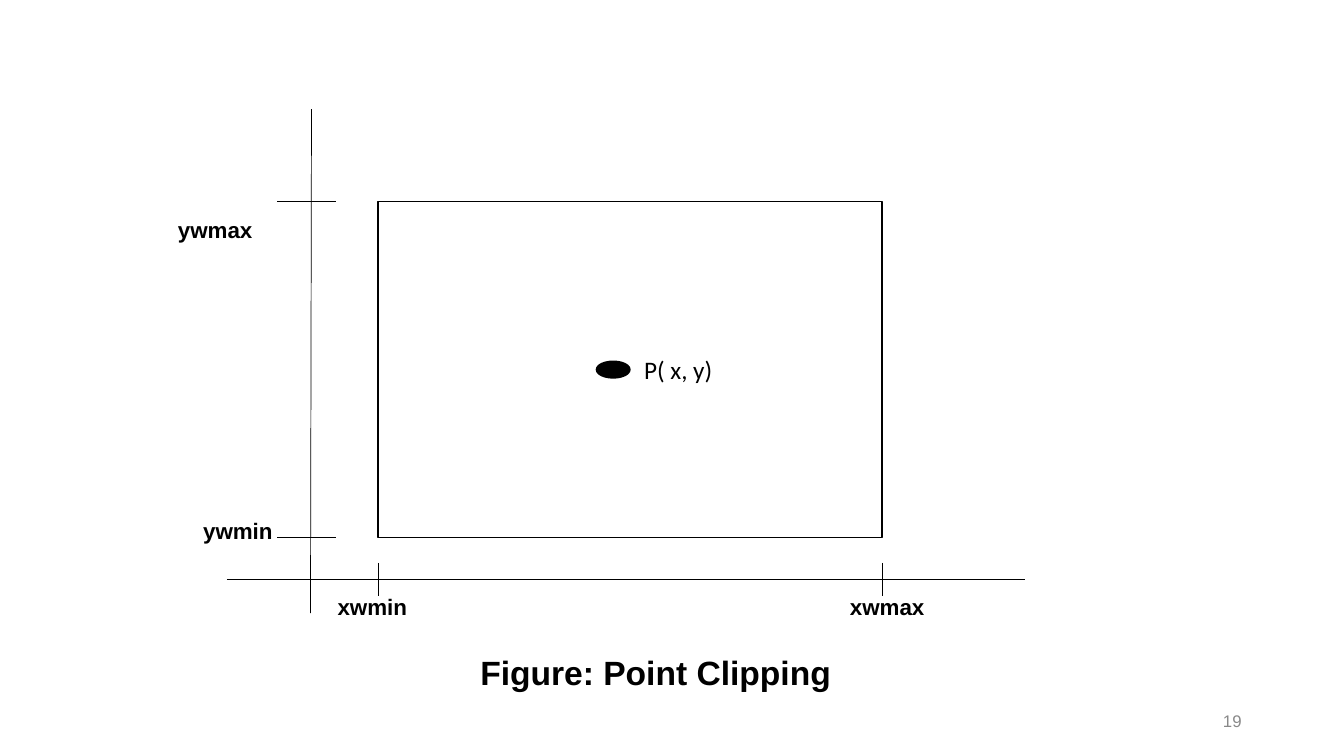
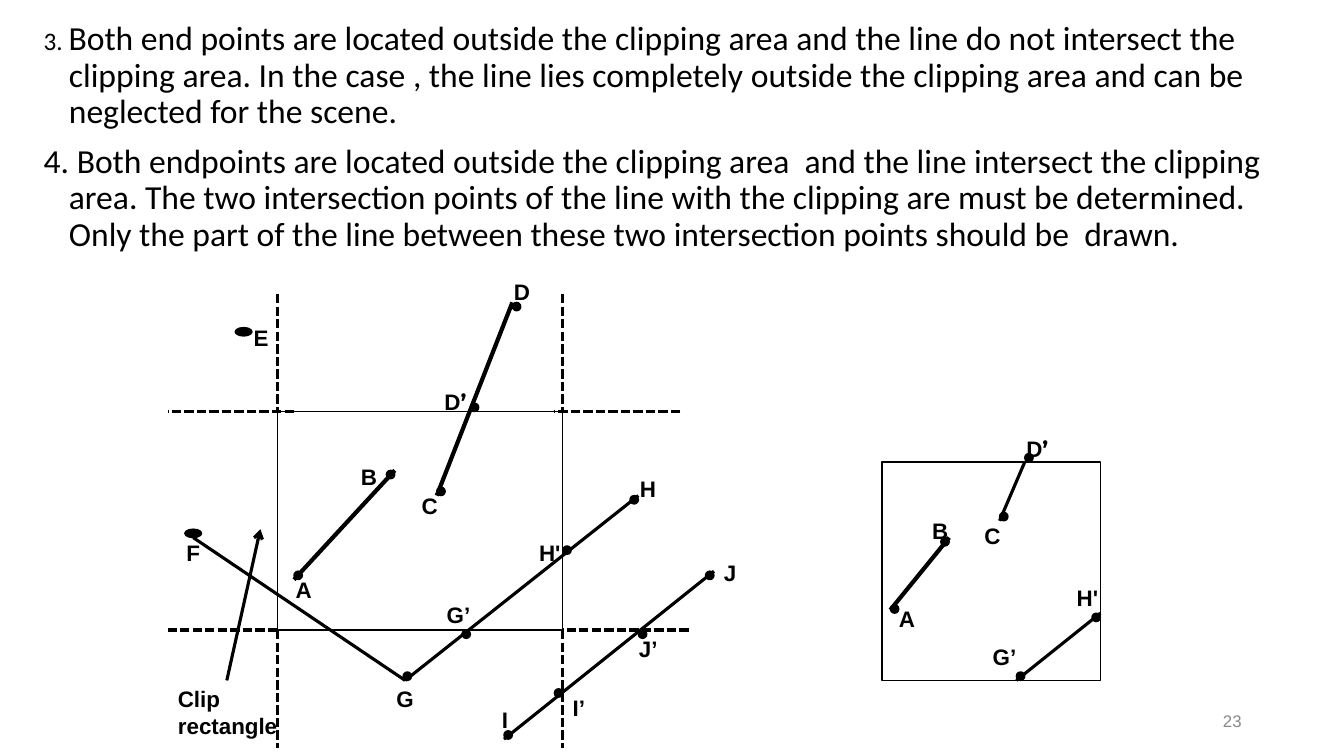
from lxml import etree
from pptx import Presentation
from pptx.dml.color import RGBColor
from pptx.enum.dml import MSO_LINE
from pptx.enum.shapes import MSO_CONNECTOR, MSO_SHAPE
from pptx.enum.text import MSO_ANCHOR, MSO_AUTO_SIZE, PP_ALIGN
from pptx.oxml.ns import qn
from pptx.util import Pt

STRAIGHT = MSO_CONNECTOR.STRAIGHT
RECTANGLE, OVAL = MSO_SHAPE.RECTANGLE, MSO_SHAPE.OVAL
DASHED = MSO_LINE.SQUARE_DOT
TOP, MIDDLE = MSO_ANCHOR.TOP, MSO_ANCHOR.MIDDLE
LEFT, CENTER, RIGHT = PP_ALIGN.LEFT, PP_ALIGN.CENTER, PP_ALIGN.RIGHT
NO_FIT = MSO_AUTO_SIZE.NONE

# Shared style
BLACK, WHITE, GREY = "000000", "FFFFFF", "898989"
LABEL_FONT, BODY_FONT, PRIME_FONT = "Arial", "Calibri", "Montserrat"
LABEL_SIZE, LABEL_HEIGHT = 16, 27
NUMBER_BOX = (678, 500.4, 216, 28.8)
THIN, MEDIUM, THICK = 0.5, 2.25, 3
DOT = 6

# Point clipping: window and axes
WINDOW = (270, 144, 360, 240)
POINT = (426, 258, 24, 12)
POINT_NAME = "P( x, y)"
POINT_NAME_INSET = 76
AXES = [((222.5, 78), (221.8, 438)), ((162, 414), (732, 414))]
Y_TICK, X_TICK = (198, 240), (402, 426)
LIMITS = [  # text, left, top
    ("ywmax", 120, 151), ("ywmin", 138, 366),
    ("xwmin", 234, 420), ("xwmax", 600, 420),
]
CAPTION = "Figure: Point Clipping"

# Line clipping: cases, points and lines
CASES = [
    [("3. ", 18), ("Both end points are located outside the clipping area and "
                   "the line do not intersect the clipping area. In the case , "
                   "the line lies completely outside the clipping area and can "
                   "be neglected for the scene.", 24)],
    [("4. Both endpoints are located outside the clipping area  and the line "
      "intersect the clipping area. The two intersection points of the line "
      "with the clipping are must be determined. Only the part of the line "
      "between these two intersection points should be  drawn.", 24)],
]
CLIP_AREA = (198, 294, 204, 156)
RESULT_AREA = (630, 330, 156, 156)
POINTS = [  # name, dot left and top, label left and top, dot width
    ("A", (210, 408), (204, 408), DOT),
    ("B", (276, 336), (250.6, 327.6), DOT),
    ("C", (312, 348), (294, 348), DOT),
    ("D", (366, 216), (360, 195), DOT),
    ("D’", (336, 288), (310.3, 273.6), DOT),
    ("E", (168, 234), (174, 228), 2 * DOT),
    ("F", (132, 378), (126, 381.6), 2 * DOT),
    ("G", (288, 480), (276, 486), DOT),
    ("G’", (330, 450), (312, 426), DOT),
    ("H", (450, 354), (450, 336), DOT),
    ("H'", (402, 390), (378, 381.6), DOT),
    ("I", (360, 522), (351.4, 501), DOT),
    ("I’", (396, 492), (402, 492), DOT),
    ("J", (504, 408), (510, 396), DOT),
    ("J’", (456, 450), (449.3, 450), DOT),
    # after clipping
    ("A", (636, 432), (635, 428.4), DOT),
    ("B", (672, 384), (658.8, 366), DOT),
    ("C", (714, 366), (696, 369.4), DOT),
    ("D’", (732, 324), (726, 307.4), DOT),
    ("G’", (726, 480), (702, 456), DOT),
    ("H'", (780, 438), (762, 414), DOT),
]
SEGMENTS = [
    ((210, 414), (282, 336), THICK),
    ((312, 354), (366, 216), THICK),
    ((360, 528), (510, 408), MEDIUM),
    ((289.4, 486), (456, 354), MEDIUM),
    ((289.4, 486), (138, 384), MEDIUM),
    # after clipping
    ((636, 435.6), (678, 384), THICK),
    ((714, 372), (732, 330), MEDIUM),
    ((726, 486), (786, 438), MEDIUM),
]
POINTER = ((162, 486), (186, 378))
POINTER_NAME = "Clip\nrectangle"


def color(hex_text):
    return RGBColor.from_string(hex_text)


def style(run, size, font=LABEL_FONT, bold=False, ink=BLACK):
    run.font.size, run.font.name, run.font.bold = Pt(size), font, bold
    run.font.color.rgb = color(ink)


def add_text(slide, text, box, size=LABEL_SIZE, bold=True, ink=BLACK,
             align=LEFT, anchor=TOP):
    frame = slide.shapes.add_textbox(*map(Pt, box)).text_frame
    frame.word_wrap = True
    frame.vertical_anchor = anchor
    frame.text = text
    for paragraph in frame.paragraphs:
        paragraph.alignment = align
        for run in paragraph.runs:
            style(run, size, bold=bold, ink=ink)
    return frame


def add_figure(slide, kind, box, fill=None):
    figure = slide.shapes.add_shape(kind, *map(Pt, box))
    figure.shadow.inherit = False
    if fill:
        figure.fill.solid()
        figure.fill.fore_color.rgb = color(fill)
    else:
        figure.fill.background()
    figure.line.color.rgb = color(BLACK)
    figure.line.width = Pt(1)
    return figure


def add_line(slide, start, end, width=THIN, dash=None, arrow=False):
    line = slide.shapes.add_connector(STRAIGHT, *map(Pt, (*start, *end)))
    line.line.color.rgb = color(BLACK)
    line.line.width = Pt(width)
    if dash:
        line.line.dash_style = dash
    properties = line._element.spPr
    if arrow:
        etree.SubElement(properties.find(qn("a:ln")), qn("a:tailEnd"), type="arrow")
    etree.SubElement(properties, qn("a:effectLst"))


def add_number(slide, number):
    add_text(slide, number, NUMBER_BOX, 12, False, GREY, RIGHT, MIDDLE)


def add_point(slide, name, dot, label, dot_width):
    add_figure(slide, OVAL, (*dot, dot_width, DOT), BLACK)
    frame = add_text(slide, name, (*label, 20 + 7 * len(name), LABEL_HEIGHT))
    if name == "D’":
        paragraph = frame.paragraphs[0]
        paragraph.runs[0].text = name[0]
        prime = paragraph.add_run()
        prime.text = name[1]
        style(prime, LABEL_SIZE, PRIME_FONT, True)


def build_point_clipping(deck):
    slide = deck.slides.add_slide(deck.slide_layouts[6])
    left, top, width, height = WINDOW
    for start, end in AXES:
        add_line(slide, start, end)

    # Window with the point inside
    frame = add_figure(slide, RECTANGLE, WINDOW, WHITE).text_frame
    frame.vertical_anchor = MIDDLE
    frame.margin_left = Pt(POINT_NAME_INSET)
    frame.text = POINT_NAME
    frame.paragraphs[0].alignment = CENTER
    style(frame.paragraphs[0].runs[0], 18, BODY_FONT)
    add_figure(slide, OVAL, POINT, BLACK)

    # Ticks level with the window's sides
    for y in (top, top + height):
        add_line(slide, (Y_TICK[0], y), (Y_TICK[1], y))
    for x in (left, left + width):
        add_line(slide, (x, X_TICK[0]), (x, X_TICK[1]))
    for text, x, y in LIMITS:
        add_text(slide, text, (x, y, 76, LABEL_HEIGHT))

    add_text(slide, CAPTION, (336, 462, 280, 36.7), 24)
    add_number(slide, "19")


def add_cases(slide):
    body = slide.placeholders[1]
    body.left, body.top, body.width, body.height = map(Pt, (24, 12, 906, 522))
    frame = body.text_frame
    frame.auto_size = NO_FIT
    for index, case in enumerate(CASES):
        paragraph = frame.add_paragraph() if index else frame.paragraphs[0]
        paragraph.line_spacing = 0.9
        paragraph.space_before = Pt(10)
        layout = paragraph._p.get_or_add_pPr()
        layout.set("marL", str(Pt(18)))
        layout.set("indent", str(Pt(-18)))
        etree.SubElement(layout, qn("a:buNone"))
        for text, size in case:
            run = paragraph.add_run()
            run.text = text
            style(run, size, BODY_FONT)


def build_line_clipping(deck):
    slide = deck.slides.add_slide(deck.slide_layouts[1])
    title = slide.shapes.title._element
    title.getparent().remove(title)
    add_cases(slide)
    add_number(slide, "23")

    # Clipping area, its extended sides and the clipped result
    for area in (CLIP_AREA, RESULT_AREA):
        add_figure(slide, RECTANGLE, area)
    left, top, width, height = CLIP_AREA
    right, bottom = left + width, top + height
    for x in (left, right):
        for y_from, y_to in ((210, top), (bottom, 534)):
            add_line(slide, (x, y_from), (x, y_to), MEDIUM, DASHED)
    for y, x_from, x_to in ((top, left + 12, 120), (top, 486, right - 6),
                            (bottom, left, 120), (bottom, 492, right)):
        add_line(slide, (x_from, y), (x_to, y), MEDIUM, DASHED)

    # Lines, points and the pointer to the clipping area
    for segment in SEGMENTS:
        add_line(slide, *segment)
    for point in POINTS:
        add_point(slide, *point)
    add_line(slide, *POINTER, MEDIUM, arrow=True)
    add_text(slide, POINTER_NAME, (120, 486, 90, 46))


def main():
    deck = Presentation()
    deck.slide_width, deck.slide_height = Pt(960), Pt(540)
    build_point_clipping(deck)
    build_line_clipping(deck)
    deck.save("out.pptx")


if __name__ == "__main__":
    main()
